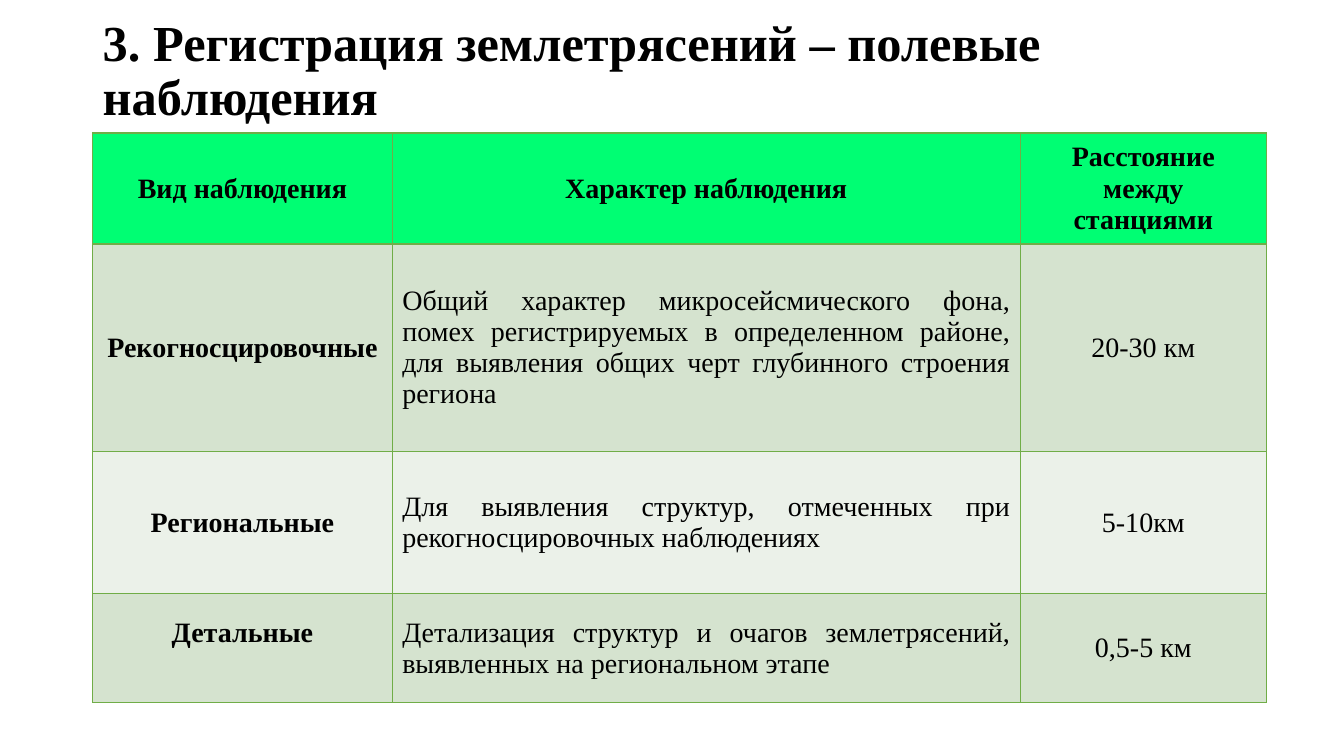
from lxml import etree
from pptx import Presentation
from pptx import util as u
from pptx.dml import color
from pptx.enum import text
from pptx.oxml import ns

FONT = "Times New Roman"
COLORS = {"text": "000000", "head": "00FE73", "odd": "D5E3CF",
          "even": "EBF1E9", "border": "70AD47"}
COLS = [2.97, 6.23, 2.44]
ROWS = [1.09, 2.06, 1.41, 1.08]
OBSERVATIONS = [
    ("Вид наблюдения", "Характер наблюдения", "Расстояние между станциями"),
    ("Рекогносцировочные",
     "Общий характер микросейсмического фона, помех регистрируемых в "
     "определенном районе, для выявления общих черт глубинного строения региона",
     "20-30 км"),
    ("Региональные",
     "Для выявления структур, отмеченных при рекогносцировочных наблюдениях",
     "5-10км"),
    ("Детальные",
     "Детализация структур и очагов землетрясений, выявленных на региональном этапе",
     "0,5-5 км"),
]


def rgb(name):
    """Return the named colour."""
    return color.RGBColor.from_string(COLORS[name])


def set_font(p, size, bold):
    """Set the font of a paragraph."""
    p.font.name = FONT
    p.font.size = u.Pt(size)
    p.font.bold = bold
    p.font.color.rgb = rgb("text")


def set_borders(cell):
    """Draw a thin line on the four sides of a cell."""
    tcPr = cell._tc.get_or_add_tcPr()
    for i, side in enumerate(("lnL", "lnR", "lnT", "lnB")):
        ln = etree.Element(ns.qn(f"a:{side}"), w=str(u.Pt(1)))
        fill = etree.SubElement(ln, ns.qn("a:solidFill"))
        etree.SubElement(fill, ns.qn("a:srgbClr"), val=COLORS["border"])
        tcPr.insert(i, ln)


def add_title(s, left, top, width, height):
    """Place the slide title in the given box."""
    sp = s.shapes.add_textbox(*map(u.Inches, (left, top, width, height)))
    tf = sp.text_frame
    tf.word_wrap = True
    tf.vertical_anchor = text.MSO_ANCHOR.MIDDLE
    p = tf.paragraphs[0]
    p.text = "3. Регистрация землетрясений – полевые наблюдения"
    p.line_spacing = 0.9
    set_font(p, 36, True)


def add_observations(s, left, top):
    """Place the table of observation types at the given corner."""
    box = map(u.Inches, (left, top, sum(COLS), sum(ROWS)))
    table = s.shapes.add_table(len(ROWS), len(COLS), *box).table
    for column, width in zip(table.columns, COLS):
        column.width = u.Inches(width)
    for i, (height, words) in enumerate(zip(ROWS, OBSERVATIONS)):
        table.rows[i].height = u.Inches(height)
        band = "head" if i == 0 else "odd" if i % 2 else "even"
        for j, word in enumerate(words):
            cell = table.cell(i, j)
            cell.vertical_anchor = text.MSO_ANCHOR.MIDDLE
            cell.fill.solid()
            cell.fill.fore_color.rgb = rgb(band)
            set_borders(cell)
            p = cell.text_frame.paragraphs[0]
            p.text = word
            justified = i > 0 and j == 1
            p.alignment = text.PP_ALIGN.JUSTIFY if justified else text.PP_ALIGN.CENTER
            set_font(p, 20, i == 0 or j == 0)
    table.cell(len(ROWS) - 1, 0).margin_bottom = u.Inches(0.36)


def main():
    """Build and save the slide."""
    prs = Presentation()
    prs.slide_width, prs.slide_height = u.Inches(13.33), u.Inches(7.5)
    s = prs.slides.add_slide(prs.slide_layouts[6])
    add_title(s, 0.92, 0, 11.99, 1.43)
    add_observations(s, 0.92, 1.32)
    prs.save("out.pptx")


if __name__ == "__main__":
    main()
